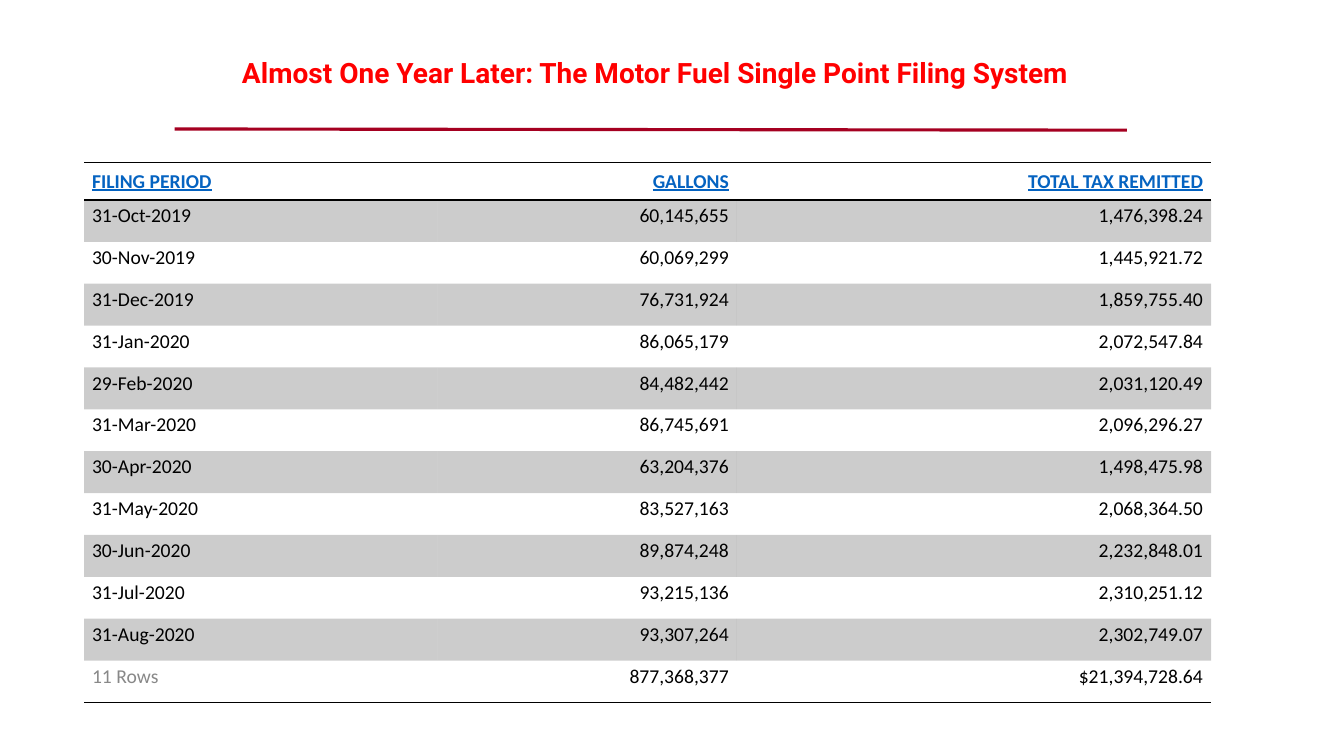
"""Build the motor fuel filing slide with its title, rule and table."""
from lxml.etree import SubElement
from pptx import Presentation
from pptx.dml.color import RGBColor
from pptx.enum.shapes import MSO_CONNECTOR
from pptx.enum.text import MSO_ANCHOR as ANCHOR, PP_ALIGN as ALIGN
from pptx.oxml import parse_xml
from pptx.oxml.ns import nsdecls, qn
from pptx.util import Cm, Pt

RED = RGBColor(0xFF, 0x00, 0x00)
CRIMSON = RGBColor(0xA5, 0x00, 0x21)
BLUE = RGBColor(0x05, 0x63, 0xC1)
BLACK = RGBColor(0x00, 0x00, 0x00)
GREY = RGBColor(0x88, 0x88, 0x88)
NO_STYLE = "{2D5ABB26-0587-4C30-8999-92F81FD0307C}"

ROWS = [
    ("FILING PERIOD", "GALLONS", "TOTAL TAX REMITTED"),
    ("31-Oct-2019", "60,145,655", "1,476,398.24"),
    ("30-Nov-2019", "60,069,299", "1,445,921.72"),
    ("31-Dec-2019", "76,731,924", "1,859,755.40"),
    ("31-Jan-2020", "86,065,179", "2,072,547.84"),
    ("29-Feb-2020", "84,482,442", "2,031,120.49"),
    ("31-Mar-2020", "86,745,691", "2,096,296.27"),
    ("30-Apr-2020", "63,204,376", "1,498,475.98"),
    ("31-May-2020", "83,527,163", "2,068,364.50"),
    ("30-Jun-2020", "89,874,248", "2,232,848.01"),
    ("31-Jul-2020", "93,215,136", "2,310,251.12"),
    ("31-Aug-2020", "93,307,264", "2,302,749.07"),
    ("11 Rows", "877,368,377", "$21,394,728.64"),
]
LAST = len(ROWS) - 1


def write(tf, text, font="Calibri", size=14, color=BLACK, bold=False,
          underline=False, align=ALIGN.LEFT):
    p = tf.paragraphs[0]
    p.alignment = align
    r = p.add_run()
    r.text = text
    r.font.name, r.font.size = font, Pt(size)
    r.font.bold, r.font.underline = bold, underline
    r.font.color.rgb = color


def add_border(cell, side):
    cell._tc.get_or_add_tcPr().append(parse_xml(
        f'<a:{side} {nsdecls("a")} w="{Pt(1)}"><a:solidFill>'
        f'<a:srgbClr val="{BLACK}"/></a:solidFill></a:{side}>'))


prs = Presentation()
prs.slide_width, prs.slide_height = Cm(33.87), Cm(19.05)
s = prs.slides.add_slide(prs.slide_layouts[5])

title = s.shapes.title
title.left, title.top, title.width, title.height = Cm(4.4), Cm(0.43), Cm(24.4), Cm(2.64)
tf = title.text_frame
tf.word_wrap = True
tf.vertical_anchor = ANCHOR.MIDDLE
tf.margin_top, tf.margin_bottom = Cm(0.28), Cm(0.13)
write(tf, "Almost One Year Later: The Motor Fuel Single Point Filing System ",
      font="Roboto", size=20, color=RED, bold=True, align=ALIGN.CENTER)

rule = s.shapes.add_connector(MSO_CONNECTOR.STRAIGHT, Cm(4.4), Cm(3.25), Cm(28.4), Cm(3.28))
rule.line.color.rgb = CRIMSON
rule.line.width = Pt(2.25)
SubElement(rule._element.spPr, qn("a:effectLst"))

frame = s.shapes.add_table(len(ROWS), 3, Cm(2.12), Cm(4.1), Cm(28.4), Cm(13.6))
table = frame.table
table._tbl.tblPr.find(qn("a:tableStyleId")).text = NO_STYLE
for column, width in zip(table.columns, (8.9, 7.55, 11.95)):
    column.width = Cm(width)

for i, values in enumerate(ROWS):
    header, total = i == 0, i == LAST
    table.rows[i].height = Cm(0.94 if header else 1.055)
    for j, value in enumerate(values):
        cell = table.cell(i, j)
        cell.margin_left = cell.margin_right = Cm(0.2)
        cell.margin_top = cell.margin_bottom = Cm(0.1)
        cell.vertical_anchor = ANCHOR.MIDDLE if header else ANCHOR.TOP
        color = BLUE if header else GREY if total and j == 0 else BLACK
        write(cell.text_frame, value, color=color, bold=header, underline=header,
              align=ALIGN.RIGHT if j else ALIGN.LEFT)
        if header:
            add_border(cell, "lnT")
        if header or total:
            add_border(cell, "lnB")
        if i % 2:
            cell.fill.solid()
            cell.fill.fore_color.rgb = BLACK
            tint = cell._tc.tcPr.find(".//" + qn("a:srgbClr"))
            SubElement(tint, qn("a:alpha"), val="20000")
        else:
            cell.fill.background()

prs.save("out.pptx")
